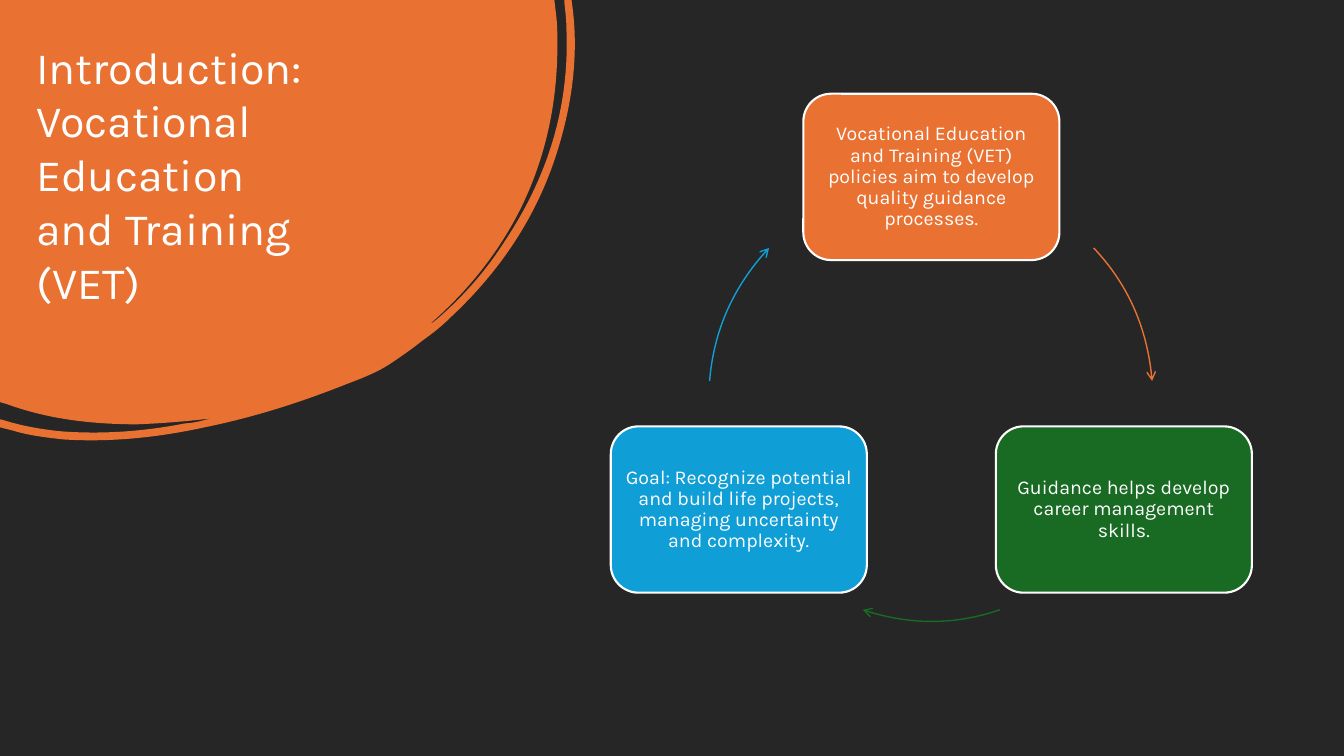
from dataclasses import dataclass

from lxml import etree
from pptx import Presentation
from pptx.dml.color import RGBColor
from pptx.enum import shapes, text
from pptx.oxml import ns
from pptx.util import Inches, Pt

WHITE = RGBColor(0xFF, 0xFF, 0xFF)
CHARCOAL = RGBColor(0x26, 0x26, 0x26)
ORANGE = RGBColor(0xE9, 0x71, 0x32)
GREEN = RGBColor(0x19, 0x6B, 0x24)
BLUE = RGBColor(0x0F, 0x9E, 0xD5)

CARD_WIDTH, CARD_HEIGHT = 2.54, 1.65
UNITS_PER_INCH = 1000

TITLE = ["Introduction:", "Vocational Education", "and Training", "(VET)"]


@dataclass
class Frame:
    left: float
    top: float
    width: float
    height: float


@dataclass
class Stage:
    """A card of the cycle and the curved arrow that leaves it."""
    message: str
    color: RGBColor
    left: float
    top: float
    arrow: list[tuple]


BLOB_FRAME = Frame(0, 0, 5.71, 4.37)
CYCLE_FRAME = Frame(7.04, 1.76, 4.4, 4.4)

STAGES = [
    Stage("Vocational Education and Training (VET) policies aim to develop "
          "quality guidance processes.", ORANGE, 7.97, 0.93,
          [(10.85, 2.46), (11.19, 2.82, 11.39, 3.29, 11.43, 3.78)]),
    Stage("Guidance helps develop career management skills.", GREEN, 9.88, 4.23,
          [(9.92, 6.05), (9.48, 6.2, 9, 6.2, 8.56, 6.05)]),
    Stage("Goal: Recognize potential and build life projects, managing "
          "uncertainty and complexity.", BLUE, 6.06, 4.23,
          [(7.04, 3.78), (7.08, 3.29, 7.29, 2.82, 7.63, 2.46)]),
]

# Two numbers are a straight step; six are two control points and an end.
BLOB = [
    (0, 0), (5.5, 0), (5.52, 0.17),
    (5.53, 0.26, 5.53, 0.36, 5.53, 0.45),
    (5.53, 1.01, 5.42, 1.54, 5.18, 2.04),
    (4.96, 2.49, 4.65, 2.88, 4.27, 3.21),
    (4.29, 3.21, 4.3, 3.19, 4.32, 3.18),
    (4.59, 2.95, 4.82, 2.69, 5.01, 2.39),
    (5.43, 1.76, 5.65, 1.07, 5.62, 0.3),
    (5.62, 0.21, 5.61, 0.12, 5.6, 0.03),
    (5.6, 0), (5.67, 0), (5.68, 0.07),
    (5.74, 0.54, 5.68, 1.02, 5.53, 1.5),
    (5.33, 2.14, 4.97, 2.68, 4.48, 3.14),
    (4.39, 3.23, 4.29, 3.31, 4.19, 3.38),
    (4.09, 3.46, 3.99, 3.53, 3.87, 3.61),
    (3.75, 3.69, 3.6, 3.75, 3.44, 3.81),
    (2.99, 3.99, 2.52, 4.14, 2.03, 4.24),
    (1.57, 4.34, 1.1, 4.39, 0.63, 4.36),
    (0.45, 4.34, 0.28, 4.32, 0.12, 4.27),
    (0, 4.24), (0, 4.16), (0.04, 4.17),
    (0.23, 4.23, 0.42, 4.26, 0.61, 4.28),
    (1.03, 4.31, 1.43, 4.28, 1.84, 4.2),
    (1.89, 4.2, 1.93, 4.19, 1.98, 4.18),
    (2.02, 4.17, 2.06, 4.16, 2.1, 4.15),
    (1.86, 4.18, 1.61, 4.2, 1.36, 4.21),
    (0.92, 4.21, 0.48, 4.16, 0.07, 4.01),
    (0, 3.99),
]


def add_outline(slide, steps: list[tuple], frame: Frame, *, close: bool):
    """Add a freeform in the given frame and bend its six-number steps."""
    builder = slide.shapes.build_freeform(*steps[0], scale=Inches(1))
    builder.add_line_segments([step[-2:] for step in steps[1:]], close=close)
    outline = builder.convert_to_shape()
    outline.left, outline.top = Inches(frame.left), Inches(frame.top)
    outline.width, outline.height = Inches(frame.width), Inches(frame.height)
    outline.shadow.inherit = False

    route = next(outline._element.iter(ns.qn("a:path")))
    route.set("w", str(round(frame.width * UNITS_PER_INCH)))
    route.set("h", str(round(frame.height * UNITS_PER_INCH)))
    for segment, step in zip(list(route), steps):
        for point in list(segment):
            segment.remove(point)
        if len(step) == 6:
            segment_curve = etree.Element(ns.qn("a:cubicBezTo"))
            route.replace(segment, segment_curve)
            segment = segment_curve
        for x, y in zip(step[::2], step[1::2]):
            etree.SubElement(segment, ns.qn("a:pt"),
                             x=str(round((x - frame.left) * UNITS_PER_INCH)),
                             y=str(round((y - frame.top) * UNITS_PER_INCH)))
    return outline


def write_text(frame, lines: list[str], *, size: float, align, anchor,
               line_spacing: float = 1.0, margins: tuple[float, float] = (0.1, 0.05)) -> None:
    frame.word_wrap = True
    frame.auto_size = text.MSO_AUTO_SIZE.NONE
    frame.vertical_anchor = anchor
    frame.margin_left = frame.margin_right = Inches(margins[0])
    frame.margin_top = frame.margin_bottom = Inches(margins[1])
    for i, line in enumerate(lines):
        paragraph = frame.paragraphs[0] if i == 0 else frame.add_paragraph()
        paragraph.alignment = align
        paragraph.line_spacing = line_spacing
        paragraph.space_before = Pt(0)
        run = paragraph.add_run()
        run.text = line
        run.font.name = "Karla"
        run.font.size = Pt(size)
        run.font.color.rgb = WHITE


def add_blob(slide) -> None:
    blob = add_outline(slide, BLOB, BLOB_FRAME, close=True)
    blob.fill.solid()
    blob.fill.fore_color.rgb = ORANGE
    blob.line.fill.background()


def add_card(slide, stage: Stage) -> None:
    card = slide.shapes.add_shape(
        shapes.MSO_SHAPE.ROUNDED_RECTANGLE, Inches(stage.left), Inches(stage.top),
        Inches(CARD_WIDTH), Inches(CARD_HEIGHT))
    card.shadow.inherit = False
    card.fill.solid()
    card.fill.fore_color.rgb = stage.color
    card.line.color.rgb = WHITE
    card.line.width = Pt(1.5)
    write_text(card.text_frame, [stage.message], size=14, align=text.PP_ALIGN.CENTER,
               anchor=text.MSO_ANCHOR.MIDDLE, line_spacing=0.9, margins=(0.06, 0.06))


def add_cycle_arrow(slide, stage: Stage) -> None:
    arrow = add_outline(slide, stage.arrow, CYCLE_FRAME, close=False)
    arrow.fill.background()
    arrow.line.color.rgb = stage.color
    arrow.line.width = Pt(1)
    etree.SubElement(arrow.line._get_or_add_ln(), ns.qn("a:tailEnd"), type="arrow")


def add_title(slide) -> None:
    title = slide.shapes.title
    title.left, title.top = Inches(0.26), Inches(0.34)
    title.width, title.height = Inches(4.43), Inches(2.26)
    write_text(title.text_frame, TITLE, size=32, align=text.PP_ALIGN.LEFT,
               anchor=text.MSO_ANCHOR.TOP)
    # The layout puts the title at the back; it belongs above the blob.
    slide.shapes._spTree.append(title._element)


def main() -> None:
    deck = Presentation()
    deck.slide_width, deck.slide_height = Inches(40 / 3), Inches(7.5)
    slide = deck.slides.add_slide(deck.slide_layouts.get_by_name("Title Only"))
    slide.background.fill.solid()
    slide.background.fill.fore_color.rgb = CHARCOAL

    add_blob(slide)
    for stage in STAGES:
        add_card(slide, stage)
        add_cycle_arrow(slide, stage)
    add_title(slide)
    deck.save("out.pptx")


if __name__ == "__main__":
    main()
